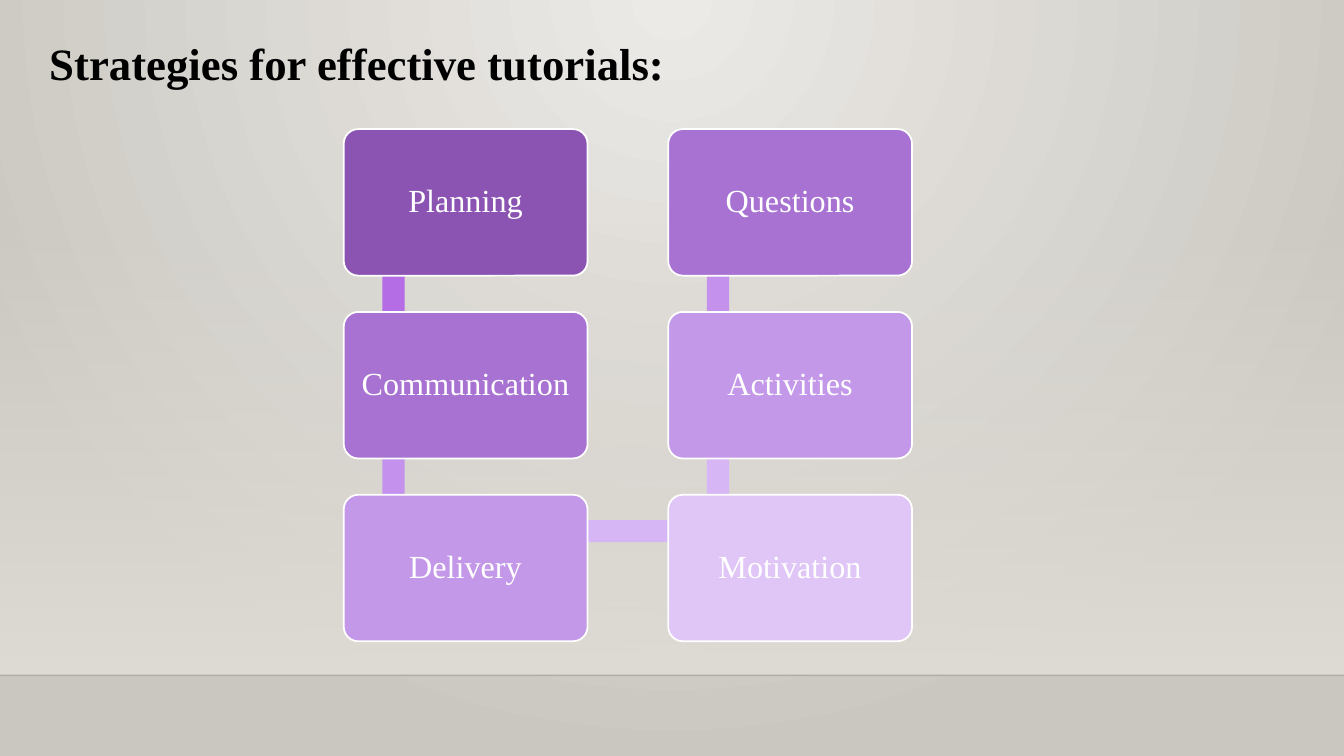
import dataclasses
import itertools

import lxml.etree
import pptx
import pptx.dml.color
import pptx.enum.shapes
import pptx.enum.text
import pptx.oxml.ns
import pptx.util

Pt = pptx.util.Pt
qn = pptx.oxml.ns.qn
MSO_SHAPE = pptx.enum.shapes.MSO_SHAPE


@dataclasses.dataclass(frozen=True)
class Theme:
    """Colours, font and type sizes of the slide."""
    font: str = "Times New Roman"
    title_size: int = 32
    card_size: int = 23
    title: str = "000000"
    white: str = "FFFFFF"
    backdrop: tuple = ("ECEAE7", "CAC7C1")
    wall: str = "DFDBD5"
    floor_line: str = "000001"


THEME = Theme()
SLIDE_BOX = (0, 0, 960, 540)
TITLE_BOX = (28.1, 18, 877.7, 111.6)
FLOW_BOX = (245.5, 92.2, 406, 365.9)
ROWS = 3
STEPS = [
    ("Planning", "8B54B2", "B46DE5"),
    ("Communication", "A772D1", "C491ED"),
    ("Delivery", "C398E8", "D7B6F5"),
    ("Motivation", "DFC6F7", "D7B6F5"),
    ("Activities", "C398E8", "C491ED"),
    ("Questions", "A772D1", None),
]


def colour(value):
    """Return an RGB colour from its hexadecimal form."""
    return pptx.dml.color.RGBColor.from_string(value)


def set_alpha(element, percent):
    """Give the first colour inside an element an opacity."""
    rgb = next(element.iter(qn("a:srgbClr")))
    lxml.etree.SubElement(rgb, qn("a:alpha")).set("val", str(percent * 1000))


def set_gradient(fill, colours):
    """Turn a fill into a two-stop gradient."""
    fill.gradient()
    for stop, value, position in zip(fill.gradient_stops, colours, (0, 1)):
        stop.color.rgb = colour(value)
        stop.position = position


def add_box(slide, kind, box):
    """Add a preset shape without shadow or outline."""
    shape = slide.shapes.add_shape(kind, *map(Pt, box))
    shape.shadow.inherit = False
    shape.line.fill.background()
    return shape


def add_run(paragraph, text, size, value, bold=False):
    """Add one styled run to a paragraph."""
    run = paragraph.add_run()
    run.text = text
    run.font.name = THEME.font
    run.font.size = Pt(size)
    run.font.bold = bold
    run.font.color.rgb = colour(value)


def add_backdrop(slide, box):
    """Paint the radial background, the fading wall and the floor line."""
    left, top, width, height = box
    set_gradient(slide.background.fill, THEME.backdrop)
    gradient = next(slide.element.iter(qn("a:gradFill")))
    gradient.remove(gradient.find(qn("a:lin")))
    circle = lxml.etree.SubElement(gradient, qn("a:path"))
    circle.set("path", "circle")
    focus = lxml.etree.SubElement(circle, qn("a:fillToRect"))
    for side, percent in zip("ltrb", (43, 0, 43, 100)):
        focus.set(side, str(percent * 1000))

    floor = top + height - 57.6
    wall_top = top + 159.1
    wall = add_box(slide, MSO_SHAPE.RECTANGLE, (left, wall_top, width, floor - wall_top))
    set_gradient(wall.fill, (THEME.wall, THEME.wall))
    wall.fill.gradient_angle = 270
    set_alpha(wall.element, 0)

    line = slide.shapes.add_connector(
        pptx.enum.shapes.MSO_CONNECTOR.STRAIGHT,
        Pt(left), Pt(floor), Pt(left + width), Pt(floor))
    line.line.width = Pt(1)
    line.line.color.rgb = colour(THEME.floor_line)
    set_alpha(line.element, 20)
    lxml.etree.SubElement(line.element.spPr, qn("a:effectLst"))


def add_title(slide, box):
    """Add the slide heading."""
    frame = slide.shapes.add_textbox(*map(Pt, box)).text_frame
    frame.word_wrap = True
    frame.margin_top = Pt(7.2)
    add_run(frame.paragraphs[0], "Strategies for effective tutorials:",
            THEME.title_size, THEME.title, True)


def add_card(slide, box, text, fill):
    """Add one rounded step card."""
    card = add_box(slide, MSO_SHAPE.ROUNDED_RECTANGLE, box)
    card.adjustments[0] = 0.1
    card.fill.solid()
    card.fill.fore_color.rgb = colour(fill)
    card.line.color.rgb = colour(THEME.white)
    card.line.width = Pt(1.25)
    frame = card.text_frame
    frame.word_wrap = True
    frame.vertical_anchor = pptx.enum.text.MSO_ANCHOR.MIDDLE
    frame.margin_left = frame.margin_right = Pt(7.2)
    frame.margin_top = frame.margin_bottom = Pt(7.2)
    paragraph = frame.paragraphs[0]
    paragraph.alignment = pptx.enum.text.PP_ALIGN.CENTER
    paragraph.line_spacing = 0.9
    add_run(paragraph, text, THEME.card_size, THEME.white)


def add_flow(slide, box):
    """Lay the steps down one column and up the next, joined by bars."""
    left, top, width, height = box
    card_width, card_height = 174.2, 104.7
    column_step = width - card_width
    row_step = (height - card_height) / (ROWS - 1)
    anchor_x, anchor_y, thickness = 35.6, 26, 15.8

    corners = []
    for index in range(len(STEPS)):
        column, row = divmod(index, ROWS)
        row = ROWS - 1 - row if column % 2 else row
        corners.append((left + column * column_step, top + row * row_step))

    for (start, end), (_, _, bar_fill) in zip(itertools.pairwise(corners), STEPS):
        (x1, y1), (x2, y2) = start, end
        across = x1 != x2
        bar_left = x1 + anchor_x - (0 if across else thickness / 2)
        bar_top = min(y1, y2) + anchor_y - (thickness / 2 if across else 0)
        size = (x2 - x1, thickness) if across else (thickness, abs(y2 - y1))
        bar = add_box(slide, MSO_SHAPE.RECTANGLE, (bar_left, bar_top, *size))
        bar.fill.solid()
        bar.fill.fore_color.rgb = colour(bar_fill)

    for corner, (text, fill, _) in zip(corners, STEPS):
        add_card(slide, (*corner, card_width, card_height), text, fill)


def main():
    """Build the slide and save it."""
    presentation = pptx.Presentation()
    presentation.slide_width, presentation.slide_height = map(Pt, SLIDE_BOX[2:])
    slide = presentation.slides.add_slide(presentation.slide_layouts[6])
    add_backdrop(slide, SLIDE_BOX)
    add_title(slide, TITLE_BOX)
    add_flow(slide, FLOW_BOX)
    presentation.save("out.pptx")


if __name__ == "__main__":
    main()
